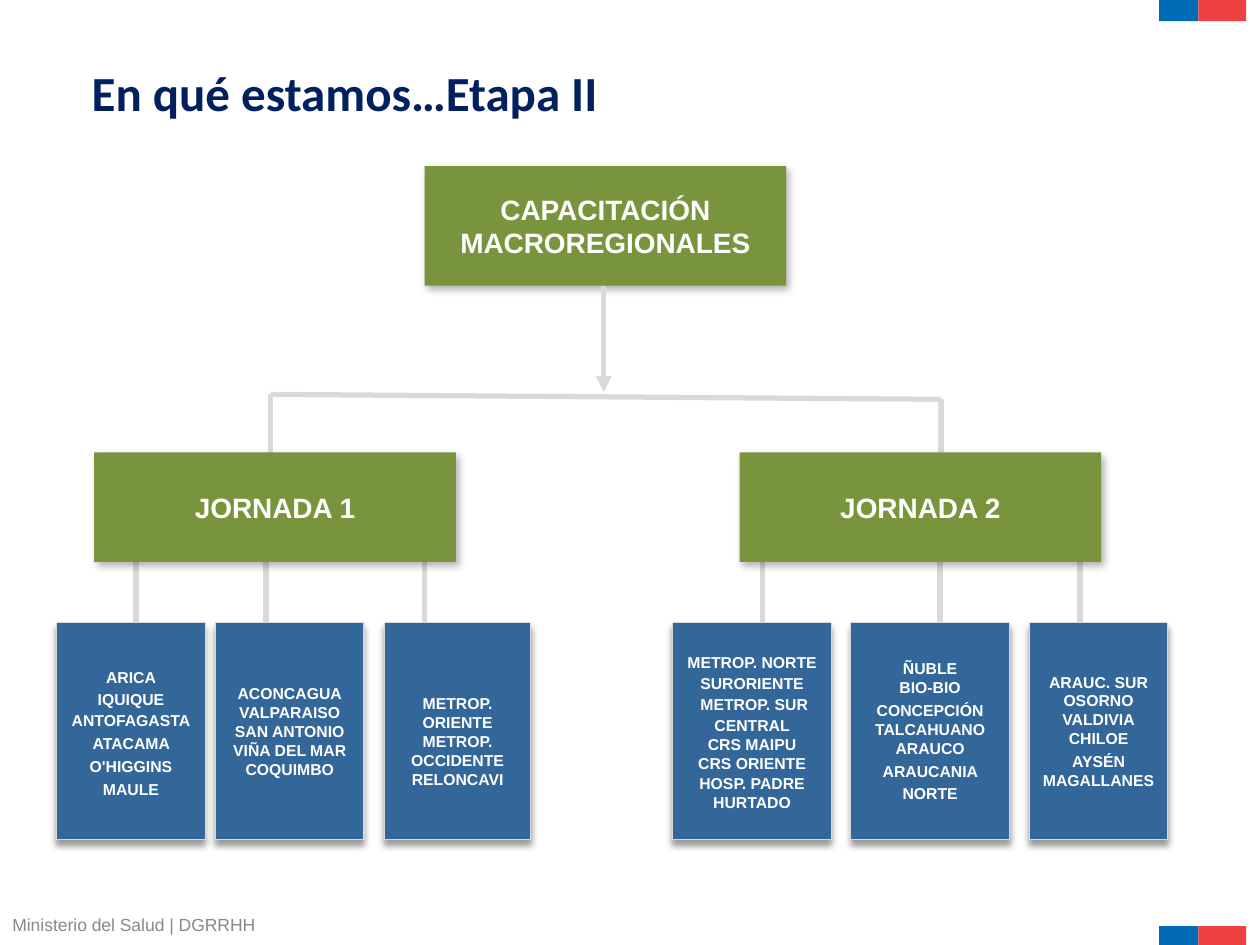
"""Build the training chart slide with its two sessions and their health areas."""
from lxml import etree
from pptx import Presentation
from pptx.dml.color import RGBColor
from pptx.enum.shapes import MSO_CONNECTOR, MSO_SHAPE
from pptx.enum.text import MSO_ANCHOR, MSO_AUTO_SIZE, PP_ALIGN
from pptx.oxml import parse_xml
from pptx.oxml.ns import nsdecls, qn
from pptx.util import Cm, Pt

RECTANGLE = MSO_SHAPE.RECTANGLE
STRAIGHT = MSO_CONNECTOR.STRAIGHT
LEFT, CENTER = PP_ALIGN.LEFT, PP_ALIGN.CENTER
TOP, MIDDLE, BOTTOM = MSO_ANCHOR.TOP, MSO_ANCHOR.MIDDLE, MSO_ANCHOR.BOTTOM
FIT_SHAPE = MSO_AUTO_SIZE.SHAPE_TO_FIT_TEXT

WHITE = RGBColor(0xFF, 0xFF, 0xFF)
GREEN = RGBColor(0x78, 0x95, 0x3D)
BLUE = RGBColor(0x33, 0x66, 0x99)
GRAY = RGBColor(0xD9, 0xD9, 0xD9)
NAVY = RGBColor(0x00, 0x20, 0x60)
FOOTER_GRAY = RGBColor(0x89, 0x89, 0x89)
FLAG_BLUE = RGBColor(0x00, 0x6C, 0xB7)
FLAG_RED = RGBColor(0xEF, 0x41, 0x44)

AREA_TOP, AREA_HEIGHT = 12.55, 4.37
SESSION_TOP, SESSION_HEIGHT = 9.12, 2.21
BOX_WIDTH = 7.29
SESSIONS = [(1.9, "JORNADA 1"), (14.91, "JORNADA 2")]
AREAS = [
    (1.14, 3.0, 0.13, [("ARICA", 13), ("IQUIQUE", 13), ("ANTOFAGASTA", 12),
                       ("ATACAMA O'HIGGINS", 13), ("MAULE", 13)]),
    (4.34, 3.0, 0.13, ["ACONCAGUA", "VALPARAISO", "SAN ANTONIO", "VIÑA DEL MAR", "COQUIMBO"]),
    (7.75, 2.95, 0.55, ["METROP. ORIENTE", "METROP. OCCIDENTE", "RELONCAVI"]),
    (13.56, 3.2, 0.13, [("METROP. NORTE SURORIENTE", 12), (" METROP. SUR CENTRAL", 12),
                        ("CRS MAIPU", 11), ("CRS ORIENTE", 11), ("HOSP. PADRE HURTADO", 11)]),
    (17.15, 3.2, 0.13, ["ÑUBLE", "BIO-BIO", ("CONCEPCIÓN", 13), "TALCAHUANO", "ARAUCO",
                        ("ARAUCANIA NORTE", 13)]),
    (20.75, 2.79, 0.13, ["ARAUC. SUR", "OSORNO", "VALDIVIA", "CHILOE", ("AYSÉN", 13),
                         "MAGALLANES"]),
]
AREA_LINES = [2.74, 5.36, 8.56, 15.37, 18.95, 21.77]


def write_text(frame, lines, *, size, color, font="Arial", bold=True, align=CENTER, anchor=MIDDLE):
    """Fill a text frame with lines, each a text or a text with its line spacing."""
    frame.vertical_anchor = anchor
    for index, line in enumerate(lines):
        text, spacing = (line, None) if isinstance(line, str) else line
        paragraph = frame.add_paragraph() if index else frame.paragraphs[0]
        paragraph.alignment = align
        if spacing:
            paragraph.line_spacing = Pt(spacing)
        run = paragraph.add_run()
        run.text = text
        run.font.name = font
        run.font.size = Pt(size)
        run.font.bold = bold
        run.font.color.rgb = color


class SlideBuilder:
    """Hold the style and the slide that receives the elements."""

    line_width = Pt(3)
    green_shadow = (30, 4.5, 2.6, 53)
    blue_shadow = (40, 4, 3, 90)

    def __init__(self, slide):
        self.slide = slide

    def rectangle(self, left, top, width, height, fill, border=None, shadow=None):
        """Add a filled rectangle with an optional border and shadow."""
        shape = self.slide.shapes.add_shape(
            RECTANGLE, Cm(left), Cm(top), Cm(width), Cm(height))
        shape.shadow.inherit = False
        shape.fill.solid()
        shape.fill.fore_color.rgb = fill
        if border is None:
            shape.line.fill.background()
        else:
            shape.line.color.rgb = border
            shape.line.width = Pt(0.75)
        if shadow:
            opacity, blur, distance, angle = shadow
            effects = shape.element.spPr.find(qn("a:effectLst"))
            effects.append(parse_xml(
                f'<a:outerShdw {nsdecls("a")} blurRad="{Pt(blur)}" dist="{Pt(distance)}" '
                f'dir="{angle * 60000}" algn="tl" rotWithShape="0"><a:srgbClr val="000000">'
                f'<a:alpha val="{opacity * 1000}"/></a:srgbClr></a:outerShdw>'))
        return shape

    def green_box(self, left, top, height, text):
        """Add a green heading box."""
        shape = self.rectangle(left, top, BOX_WIDTH, height, GREEN, shadow=self.green_shadow)
        write_text(shape.text_frame, [text], size=16, color=WHITE)

    def area_box(self, left, width, top_margin, lines):
        """Add a blue box that lists health areas."""
        shape = self.rectangle(left, AREA_TOP, width, AREA_HEIGHT, BLUE, GRAY, self.blue_shadow)
        shape.text_frame.margin_top = Cm(top_margin)
        write_text(shape.text_frame, lines, size=9, color=WHITE)

    def line(self, start, end, arrow=False):
        """Add a gray line, with an arrowhead at its end if asked."""
        connector = self.slide.shapes.add_connector(
            STRAIGHT, *(Cm(length) for length in (*start, *end)))
        connector.line.color.rgb = GRAY
        connector.line.width = self.line_width
        if arrow:
            etree.SubElement(connector.line._get_or_add_ln(), qn("a:tailEnd"), type="triangle")
        etree.SubElement(connector.element.spPr, qn("a:effectLst"))

    def text_box(self, left, top, width, height, text, wrap=True, **text_format):
        """Add a text box with one left-aligned line."""
        frame = self.slide.shapes.add_textbox(
            Cm(left), Cm(top), Cm(width), Cm(height)).text_frame
        frame.word_wrap = wrap
        frame.auto_size = FIT_SHAPE
        write_text(frame, [text], align=LEFT, **text_format)

    def flag(self, top):
        """Add the blue and red strip."""
        self.rectangle(23.37, top, 0.79, 0.43, FLAG_BLUE)
        self.rectangle(24.16, top, 0.96, 0.43, FLAG_RED)


def main():
    """Build and save the presentation."""
    presentation = Presentation()
    presentation.slide_width, presentation.slide_height = Cm(25.4), Cm(19.05)
    builder = SlideBuilder(presentation.slides.add_slide(presentation.slide_layouts[6]))

    for top in (0, 18.67):
        builder.flag(top)
    builder.text_box(0, 18.31, 5.41, 0.69, "Ministerio del Salud | DGRRHH", wrap=False,
                     size=10, color=FOOTER_GRAY, bold=False, anchor=TOP)

    builder.green_box(8.56, 3.35, 2.41, "CAPACITACIÓN MACROREGIONALES")
    left_corner, right_corner = (5.46, 7.95), (18.97, 8.05)
    builder.line(left_corner, right_corner)
    builder.line((12.17, 5.77), (12.17, 7.9), arrow=True)
    for corner in (left_corner, right_corner):
        builder.line(corner, (corner[0], SESSION_TOP + 0.4))

    for area in AREAS:
        builder.area_box(*area)
    for x in AREA_LINES:
        builder.line((x, SESSION_TOP + SESSION_HEIGHT), (x, AREA_TOP))
    for left, text in SESSIONS:
        builder.green_box(left, SESSION_TOP, SESSION_HEIGHT, text)

    builder.text_box(1.6, 1.12, 19.56, 1.45, "En qué estamos…Etapa II",
                     size=28, color=NAVY, font="Calibri", anchor=BOTTOM)
    presentation.save("out.pptx")


if __name__ == "__main__":
    main()
